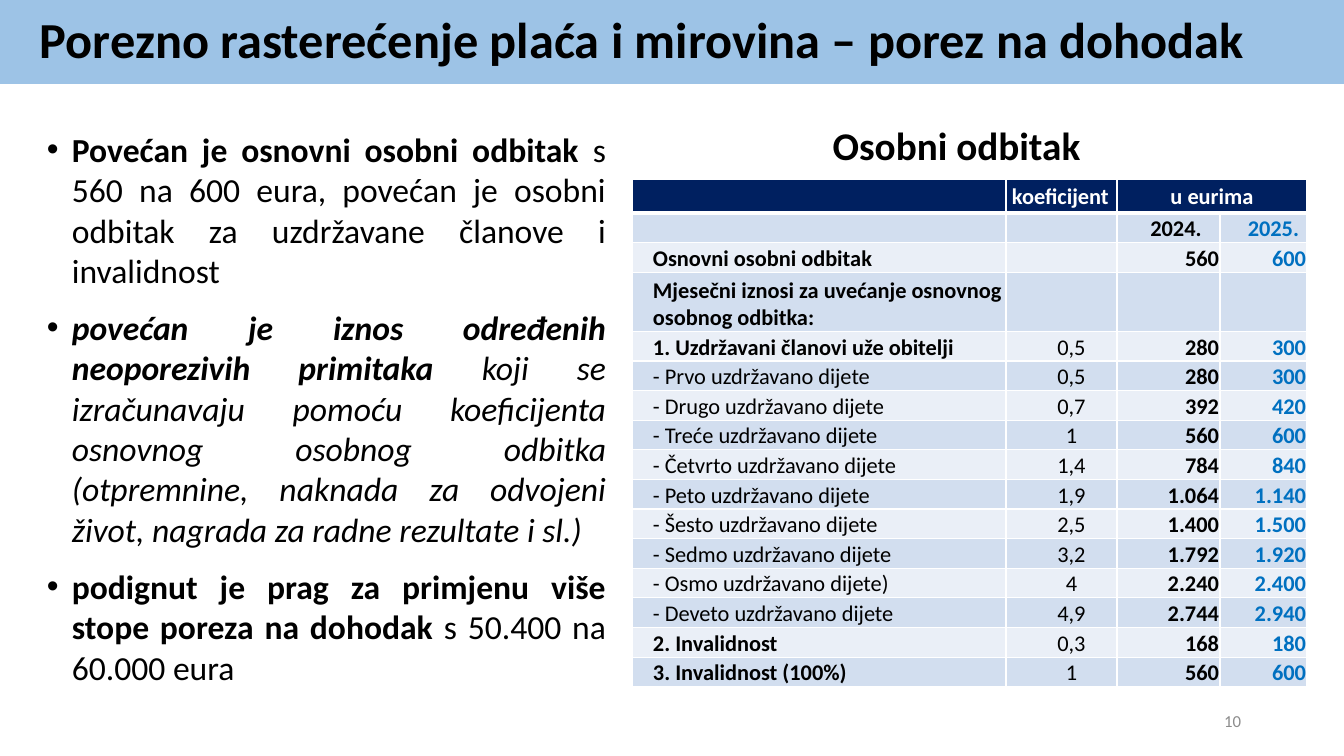
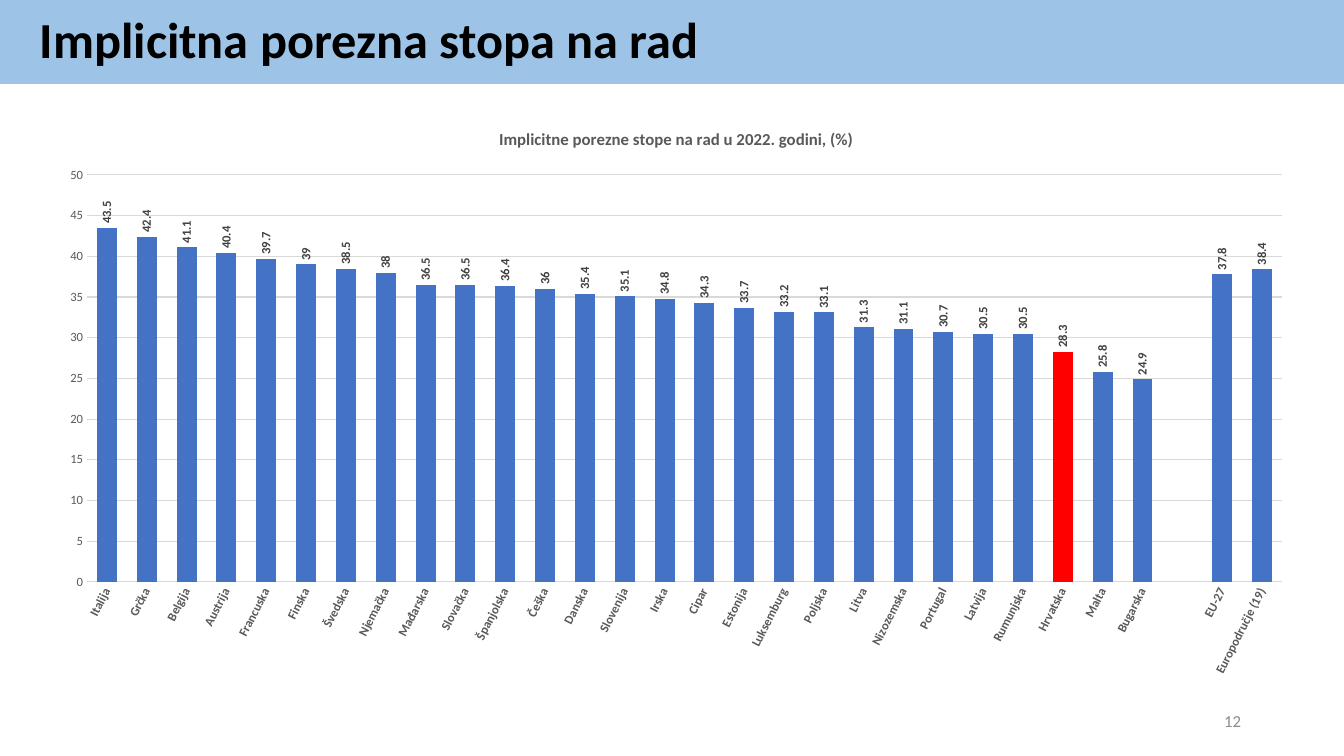
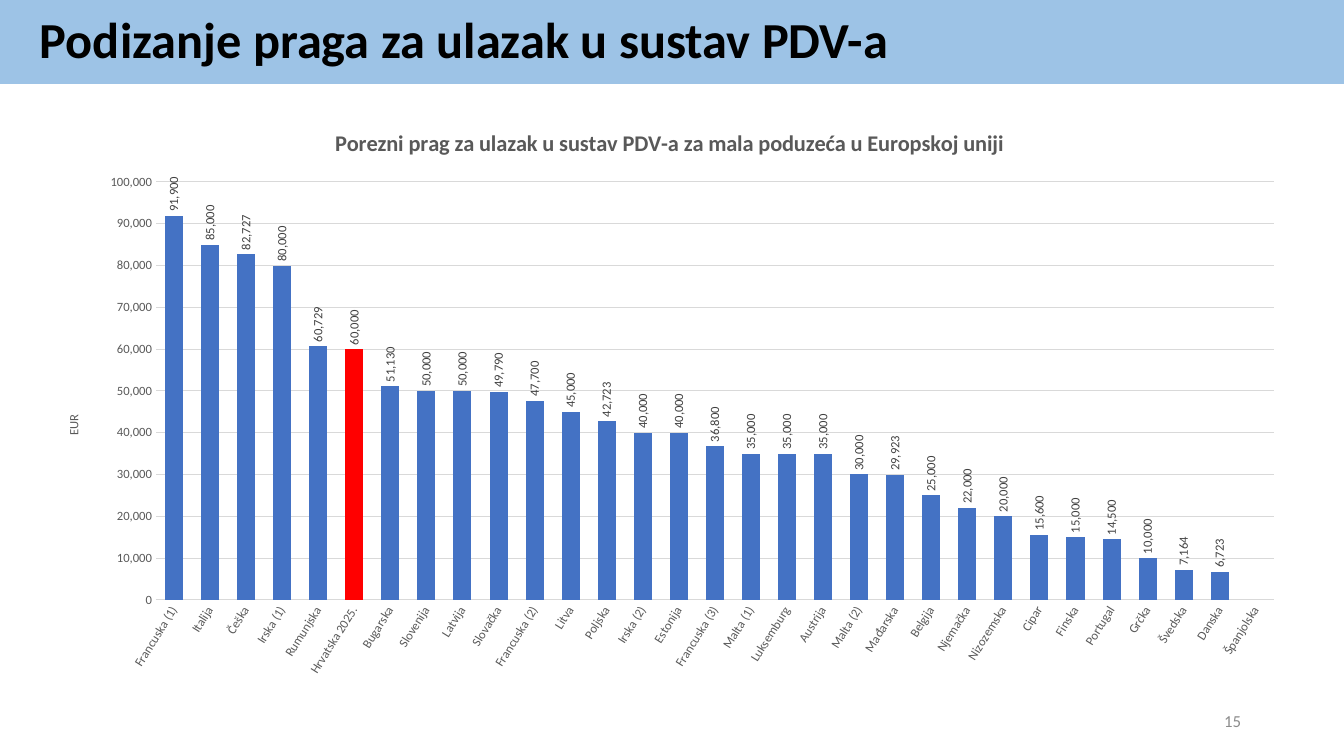
from lxml.etree import SubElement
from pptx import Presentation
from pptx.chart.data import CategoryChartData
from pptx.dml.color import RGBColor
from pptx.enum.chart import XL_CHART_TYPE, XL_LABEL_POSITION, XL_TICK_MARK
from pptx.enum.shapes import MSO_SHAPE
from pptx.enum.text import MSO_ANCHOR, PP_ALIGN
from pptx.oxml import parse_xml
from pptx.oxml.ns import nsdecls, qn
from pptx.util import Pt

EMU_PER_PX = 12192000 / 1344
SLIDE_W, SLIDE_H = 1344, 756

THEME = {
    "font": "Calibri",
    "colour": {
        "band": "9DC3E6", "text": "000000", "footer": "8C8C8C", "white": "FFFFFF",
        "header": "002060", "row_a": "D2DEEF", "row_b": "EAEFF7", "new": "0070C0",
        "bar": "4472C4", "croatia": "FF0000", "axis": "595959", "grid": "D9D9D9",
        "label": "404040",
    },
    "size": {"title": 36, "heading": 28, "body": 24, "table": 16, "footer": 12, "axis": 9},
}
COLOUR, SIZE = THEME["colour"], THEME["size"]

# Content: slide 1
DEDUCTION_TITLE = "Porezno rasterećenje plaća i mirovina – porez na dohodak"
# Each bullet is a list of (text, bold, italic)
DEDUCTION_POINTS = [
    [("Povećan je osnovni osobni odbitak", True, False),
     (" s 560 na 600 eura, povećan je osobni odbitak za uzdržavane članove i invalidnost",
      False, False)],
    [("povećan je iznos određenih neoporezivih primitaka ", True, True),
     ("koji se izračunavaju pomoću koeficijenta osnovnog osobnog odbitka (otpremnine, "
      "naknada za odvojeni život, nagrada za radne rezultate i sl.)", False, True)],
    [("podignut je prag za primjenu više stope poreza na dohodak ", True, False),
     ("s 50.400 na 60.000 eura", False, False)],
]
DEDUCTION_HEADING = "Osobni odbitak"
DEDUCTION_ROWS = [
    ("", "koeficijent", "u eurima", ""),
    ("", "", "2024.", "2025."),
    ("Osnovni osobni odbitak", "", "560", "600"),
    ("Mjesečni iznosi za uvećanje osnovnog osobnog odbitka:", "", "", ""),
    ("1. Uzdržavani članovi uže obitelji", "0,5", "280", "300"),
    ("- Prvo uzdržavano dijete", "0,5", "280", "300"),
    ("- Drugo uzdržavano dijete", "0,7", "392", "420"),
    ("- Treće uzdržavano dijete", "1", "560", "600"),
    ("- Četvrto uzdržavano dijete", "1,4", "784", "840"),
    ("- Peto uzdržavano dijete", "1,9", "1.064", "1.140"),
    ("- Šesto uzdržavano dijete", "2,5", "1.400", "1.500"),
    ("- Sedmo uzdržavano dijete", "3,2", "1.792", "1.920"),
    ("- Osmo uzdržavano dijete)", "4", "2.240", "2.400"),
    ("- Deveto uzdržavano dijete", "4,9", "2.744", "2.940"),
    ("2. Invalidnost", "0,3", "168", "180"),
    ("3. Invalidnost (100%)", "1", "560", "600"),
]
TABLE_LEFT, TABLE_TOP = 632, 179
TABLE_COLUMNS = [374, 111, 103, 87]
HEADER_H, TABLE_BODY_H = 34, 474
TWO_LINE_ROW = 3

# Content: slides 2 and 3; boxes are left, top, width, height on the slide
CHART_SLIDES = [
    {
        "title": "Implicitna porezna stopa na rad", "number": 12,
        "heading": "Implicitne porezne stope na rad u 2022. godini, (%)",
        "heading_size": 12, "heading_at": (496, 125),
        "box": (45, 108, 1262, 580), "plot": (87, 175, 1195, 407),
        "top": 50, "step": 5, "format": "General", "bold": True, "overlap": -27,
        "highlight": "Hrvatska", "slant": -63, "axis_title": None,
        "values": [
            ("Italija", 43.5), ("Grčka", 42.4), ("Belgija", 41.1), ("Austrija", 40.4),
            ("Francuska", 39.7), ("Finska", 39), ("Švedska", 38.5), ("Njemačka", 38),
            ("Mađarska", 36.5), ("Slovačka", 36.5), ("Španjolska", 36.4), ("Češka", 36),
            ("Danska", 35.4), ("Slovenija", 35.1), ("Irska", 34.8), ("Cipar", 34.3),
            ("Estonija", 33.7), ("Luksemburg", 33.2), ("Poljska", 33.1), ("Litva", 31.3),
            ("Nizozemska", 31.1), ("Portugal", 30.7), ("Latvija", 30.5),
            ("Rumunjska", 30.5), ("Hrvatska", 28.3), ("Malta", 25.8),
            ("Bugarska", 24.9), ("", None), ("EU-27", 37.8), ("Europodručje (19)", 38.4),
        ],
    },
    {
        "title": "Podizanje praga za ulazak u sustav PDV-a", "number": 15,
        "heading": "Porezni prag za ulazak u sustav PDV-a za mala poduzeća u Europskoj uniji",
        "heading_size": 16, "heading_at": (331, 124),
        "box": (45, 108, 1254, 580), "plot": (156, 182, 1118, 418),
        "top": 100000, "step": 10000, "format": "#,##0", "bold": False, "overlap": -24,
        "highlight": "Hrvatska 2025.", "slant": -58,
        "axis_title": "EUR", "axis_title_at": (63, 412),
        "values": [
            ("Francuska (1)", 91900), ("Italija", 85000), ("Češka", 82727),
            ("Irska (1)", 80000), ("Rumunjska", 60729), ("Hrvatska 2025.", 60000),
            ("Bugarska", 51130), ("Slovenija", 50000), ("Latvija", 50000),
            ("Slovačka", 49790), ("Francuska (2)", 47700), ("Litva", 45000),
            ("Poljska", 42723), ("Irska (2)", 40000), ("Estonija", 40000),
            ("Francuska (3)", 36800), ("Malta (1)", 35000), ("Luksemburg", 35000),
            ("Austrija", 35000), ("Malta (2)", 30000), ("Mađarska", 29923),
            ("Belgija", 25000), ("Njemačka", 22000), ("Nizozemska", 20000),
            ("Cipar", 15600), ("Finska", 15000), ("Portugal", 14500), ("Grčka", 10000),
            ("Švedska", 7164), ("Danska", 6723), ("Španjolska", None),
        ],
    },
]


# Shared helpers
def px(length):
    return round(length * EMU_PER_PX)


def box(*lengths):
    return [px(length) for length in lengths]


def apply(target, **values):
    for name, value in values.items():
        setattr(target, name, value)


def style_font(font, size, colour, bold=False, italic=False):
    apply(font, name=THEME["font"], size=Pt(size), bold=bold, italic=italic)
    font.color.rgb = RGBColor.from_string(COLOUR[colour])


def fill(part, colour):
    part.fill.solid()
    part.fill.fore_color.rgb = RGBColor.from_string(COLOUR[colour])


def indent(paragraph, left, first=0):
    properties = paragraph._p.get_or_add_pPr()
    properties.set("marL", str(px(left)))
    properties.set("indent", str(px(first)))
    return properties


def add_run(paragraph, text, *style):
    run = paragraph.add_run()
    run.text = text
    style_font(run.font, *style)


def add_text_box(slide, area, anchor=MSO_ANCHOR.TOP):
    frame = slide.shapes.add_textbox(*box(*area)).text_frame
    apply(frame, word_wrap=True, vertical_anchor=anchor)
    return frame


def add_page(deck, title, number):
    slide = deck.slides.add_slide(deck.slide_layouts[6])
    # Title band
    band = slide.shapes.add_shape(MSO_SHAPE.RECTANGLE, *box(0, 0, SLIDE_W, 84))
    band.shadow.inherit = False
    fill(band, "band")
    band.line.fill.background()
    apply(band.text_frame, word_wrap=True, vertical_anchor=MSO_ANCHOR.MIDDLE)
    heading = band.text_frame.paragraphs[0]
    apply(heading, alignment=PP_ALIGN.LEFT, line_spacing=0.9)
    indent(heading, 30)
    add_run(heading, title, SIZE["title"], "text", True)
    # Page number
    footer = add_text_box(slide, (949, 701, 302, 40), MSO_ANCHOR.MIDDLE).paragraphs[0]
    footer.alignment = PP_ALIGN.RIGHT
    add_run(footer, str(number), SIZE["footer"], "footer")
    return slide


# Table
def set_borders(cell, bottom):
    properties = cell._tc.get_or_add_tcPr()
    for position, (side, width) in enumerate(
            (("L", 1), ("R", 1), ("T", 1), ("B", bottom))):
        properties.insert(position, parse_xml(
            f'<a:ln{side} {nsdecls("a")} w="{Pt(width)}"><a:solidFill>'
            f'<a:srgbClr val="{COLOUR["white"]}"/></a:solidFill></a:ln{side}>'))


def cell_style(row, column, label):
    """Return alignment, indent, colour and weight for a cell."""
    if row == 0:
        return (PP_ALIGN.LEFT, 5, "white", True) if column == 1 else (
            PP_ALIGN.CENTER, 0, "white", True)
    alignment = (PP_ALIGN.LEFT, PP_ALIGN.CENTER, PP_ALIGN.RIGHT, PP_ALIGN.RIGHT)[column]
    if row == 1:
        alignment = PP_ALIGN.CENTER
    left = 15 if (row, column) == (1, 2) else 20
    bold = column > 1 or (column == 0 and not label.startswith("-"))
    return alignment, left, "new" if column == 3 else "text", bold


def fill_cell(cell, row, column, text):
    alignment, left, colour, bold = cell_style(row, column, text)
    apply(cell, margin_left=px(1), margin_right=px(1), margin_top=px(1), margin_bottom=0,
          vertical_anchor=MSO_ANCHOR.BOTTOM if row else MSO_ANCHOR.MIDDLE)
    fill(cell, ("row_a" if row % 2 else "row_b") if row else "header")
    set_borders(cell, 1 if row else 3)
    paragraph = cell.text_frame.paragraphs[0]
    apply(paragraph, alignment=alignment, space_before=Pt(2), space_after=Pt(2))
    indent(paragraph, left)
    if text:
        add_run(paragraph, text, SIZE["table"], colour, bold)
    else:
        SubElement(paragraph._p, qn("a:endParaRPr"), sz=str(SIZE["table"] * 100))


def add_deduction_table(slide):
    row_count = len(DEDUCTION_ROWS)
    table = slide.shapes.add_table(
        row_count, len(TABLE_COLUMNS),
        *box(TABLE_LEFT, TABLE_TOP, sum(TABLE_COLUMNS), HEADER_H + TABLE_BODY_H)).table
    for column, width in zip(table.columns, TABLE_COLUMNS):
        column.width = px(width)
    line_h = TABLE_BODY_H / row_count  # one row holds two lines, the header none
    for row, labels in enumerate(DEDUCTION_ROWS):
        lines = 2 if row == TWO_LINE_ROW else 1
        table.rows[row].height = px(lines * line_h if row else HEADER_H)
        for column, text in enumerate(labels):
            fill_cell(table.cell(row, column), row, column, text)
    table.cell(0, 2).merge(table.cell(0, 3))


def add_deduction_slide(deck):
    slide = add_page(deck, DEDUCTION_TITLE, 10)
    # Bullets
    frame = add_text_box(slide, (37, 124, 579, 603))
    for position, runs in enumerate(DEDUCTION_POINTS):
        paragraph = frame.add_paragraph() if position else frame.paragraphs[0]
        apply(paragraph, alignment=PP_ALIGN.JUSTIFY, space_after=Pt(12), line_spacing=1.0)
        properties = indent(paragraph, 25, -25)
        SubElement(properties, qn("a:buFont"), typeface="Arial")
        SubElement(properties, qn("a:buChar"), char="•")
        for text, bold, italic in runs:
            add_run(paragraph, text, SIZE["body"], "text", bold, italic)
    # Table with its heading
    heading = add_text_box(slide, (632, 112, 649, 56)).paragraphs[0]
    apply(heading, alignment=PP_ALIGN.CENTER, line_spacing=1.1, space_before=Pt(10))
    add_run(heading, DEDUCTION_HEADING, SIZE["heading"], "text", True)
    add_deduction_table(slide)


# Charts
def rotate(body, degrees):
    for name, value in {"rot": str(degrees * 60000), "vert": "horz"}.items():
        body.set(name, value)


def label_body(part):
    return part._element.find(qn("c:txPr")).find(qn("a:bodyPr"))


def place(element, position, area, chart_box):
    """Fix a chart part at slide coordinates; a four-value area is the inner plot."""
    for old in element.findall(qn("c:layout")):
        element.remove(old)
    left, top, width, height = chart_box
    shares = [(area[0] - left) / width, (area[1] - top) / height]
    shares += [length / whole for length, whole in zip(area[2:], (width, height))]
    layout = parse_xml(f'<c:layout {nsdecls("c")}><c:manualLayout/></c:layout>')
    manual = layout[0]
    if len(area) == 4:
        SubElement(manual, qn("c:layoutTarget"), val="inner")
    for name in ("xMode", "yMode"):
        SubElement(manual, qn(f"c:{name}"), val="edge")
    for name, share in zip("xywh", shares):
        SubElement(manual, qn(f"c:{name}"), val=f"{share:.4f}")
    element.insert(position, layout)


def add_chart_title(title, text, size, bold, at, chart_box):
    add_run(title.text_frame.paragraphs[0], text, size, "axis", bold)
    place(title._element, 1, at, chart_box)


def style_line(line, width):
    line.color.rgb = RGBColor.from_string(COLOUR["grid"])
    line.width = Pt(width)


def add_chart_slide(deck, content):
    slide = add_page(deck, content["title"], content["number"])
    names, values = zip(*content["values"])
    chart_box = content["box"]
    data = CategoryChartData(number_format=content["format"])
    data.categories = names
    data.add_series(content["heading"], values)
    chart = slide.shapes.add_chart(
        XL_CHART_TYPE.COLUMN_CLUSTERED, *box(*chart_box), data).chart
    style_font(chart.font, 10, "text")
    apply(chart, has_legend=False, has_title=True)
    add_chart_title(chart.chart_title, content["heading"], content["heading_size"], True,
                    content["heading_at"], chart_box)
    place(chart._chartSpace.chart.plotArea, 0, content["plot"], chart_box)

    # Bars and their labels
    plot = chart.plots[0]
    apply(plot, gap_width=100, overlap=content["overlap"], vary_by_categories=False,
          has_data_labels=True)
    bars = plot.series[0]
    bars.invert_if_negative = False
    fill(bars.format, "bar")
    fill(bars.points[names.index(content["highlight"])].format, "croatia")
    labels = plot.data_labels
    apply(labels, show_value=True, position=XL_LABEL_POSITION.OUTSIDE_END,
          number_format=content["format"], number_format_is_linked=False)
    style_font(labels.font, SIZE["axis"], "label", content["bold"])
    rotate(label_body(labels), -90)

    # Axes
    countries, scale = chart.category_axis, chart.value_axis
    for axis, bold in ((countries, content["bold"]), (scale, False)):
        apply(axis, major_tick_mark=XL_TICK_MARK.NONE, minor_tick_mark=XL_TICK_MARK.NONE)
        style_font(axis.tick_labels.font, SIZE["axis"], "axis", bold)
    rotate(label_body(countries), content["slant"])
    style_line(countries.format.line, 0.75)
    apply(scale, minimum_scale=0, maximum_scale=content["top"], major_unit=content["step"],
          has_major_gridlines=True)
    apply(scale.tick_labels, number_format=content["format"], number_format_is_linked=False)
    scale.format.line.fill.background()
    style_line(scale.major_gridlines.format.line, 0.75)
    if content["axis_title"]:
        scale.has_title = True
        add_chart_title(scale.axis_title, content["axis_title"], SIZE["axis"], False,
                        content["axis_title_at"], chart_box)
        rotate(scale.axis_title.text_frame._txBody.find(qn("a:bodyPr")), -90)


def main():
    deck = Presentation()
    apply(deck, slide_width=px(SLIDE_W), slide_height=px(SLIDE_H))
    add_deduction_slide(deck)
    for content in CHART_SLIDES:
        add_chart_slide(deck, content)
    deck.save("out.pptx")


if __name__ == "__main__":
    main()
